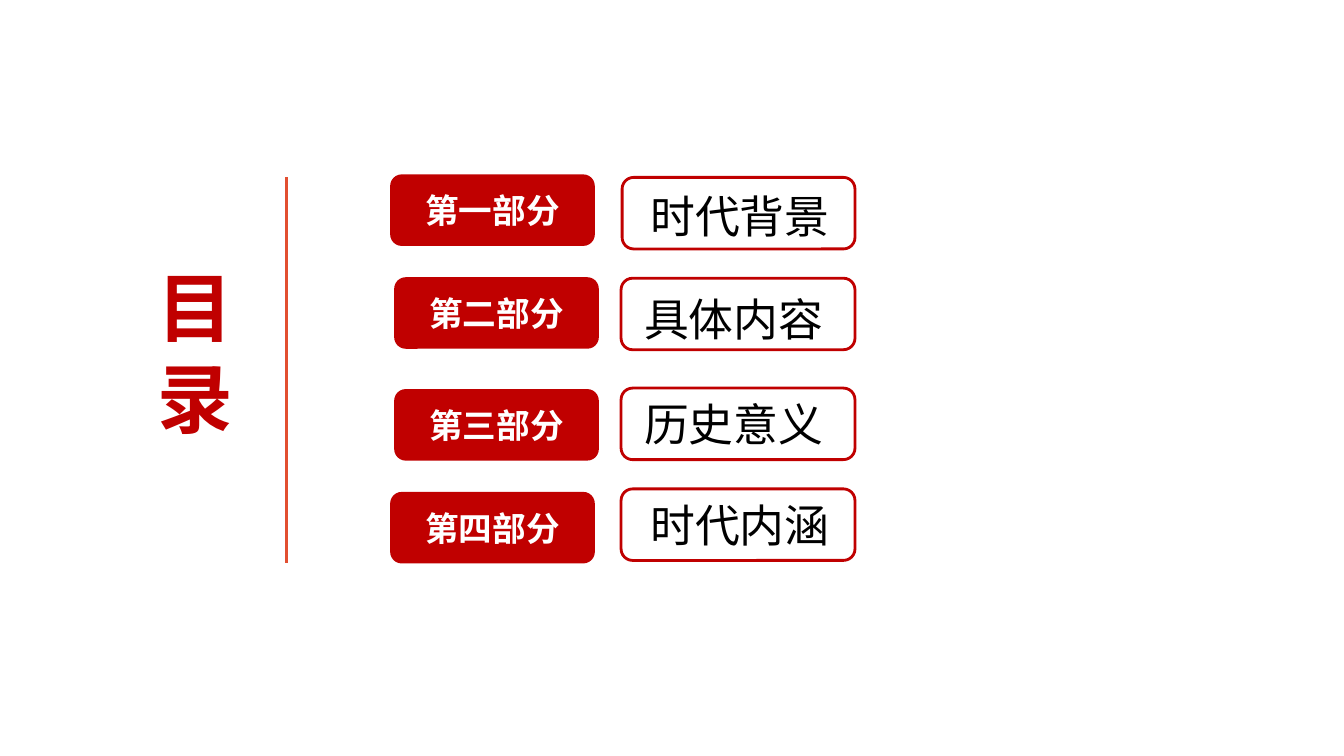
from lxml import etree
from pptx import Presentation
from pptx.dml.color import RGBColor
from pptx.enum.shapes import MSO_CONNECTOR, MSO_SHAPE
from pptx.enum.text import MSO_ANCHOR, MSO_AUTO_SIZE, PP_ALIGN
from pptx.oxml.ns import qn
from pptx.util import Inches, Pt

ROUND = MSO_SHAPE.ROUNDED_RECTANGLE
STRAIGHT = MSO_CONNECTOR.STRAIGHT
MIDDLE = MSO_ANCHOR.MIDDLE
GROW = MSO_AUTO_SIZE.SHAPE_TO_FIT_TEXT
CENTER = PP_ALIGN.CENTER

RED = RGBColor(0xC0, 0x00, 0x00)
ORANGE = RGBColor(0xE2, 0x4F, 0x31)
WHITE = RGBColor(0xFF, 0xFF, 0xFF)
BLACK = RGBColor(0x00, 0x00, 0x00)


class Deck:
    head_font = "Noto Sans CJK SC"
    body_font = "Noto Sans CJK JP"
    high = 0.71
    curve = 0.161

    def __init__(self):
        self.prs = Presentation()
        self.prs.slide_width = Inches(13.33)
        self.prs.slide_height = Inches(7.5)
        self.slide = self.prs.slides.add_slide(self.prs.slide_layouts[6])

    def style(self, frame, text, size, color, bold=False):
        frame.text = text
        face = self.head_font if bold else self.body_font
        for para in frame.paragraphs:
            for run in para.runs:
                font = run.font
                font.size = Pt(size)
                font.bold = bold
                font.color.rgb = color
                font.name = face
                east = etree.SubElement(run._r.get_or_add_rPr(), qn("a:ea"))
                east.set("typeface", face)

    def panel(self, left, top, width):
        box = self.slide.shapes.add_shape(
            ROUND, Inches(left), Inches(top), Inches(width), Inches(self.high))
        box.adjustments[0] = self.curve
        box.shadow.inherit = False
        return box

    def badge(self, left, top, text):
        box = self.panel(left, top, 2.03)
        box.fill.solid()
        box.fill.fore_color.rgb = RED
        box.line.fill.background()
        frame = box.text_frame
        frame.vertical_anchor = MIDDLE
        self.style(frame, text, 24, WHITE, True)
        frame.paragraphs[0].alignment = CENTER

    def outline(self, left, top, width):
        box = self.panel(left, top, width)
        box.fill.background()
        box.line.color.rgb = RED
        box.line.width = Pt(2)

    def label(self, left, top, width, height, text, size=32, color=BLACK,
              bold=False, flush=False):
        box = self.slide.shapes.add_textbox(
            Inches(left), Inches(top), Inches(width), Inches(height))
        frame = box.text_frame
        frame.word_wrap = flush
        frame.auto_size = GROW
        if flush:
            frame.margin_left = frame.margin_right = 0
            frame.margin_top = frame.margin_bottom = 0
        self.style(frame, text, size, color, bold)

    def rule(self, left, top, end):
        line = self.slide.shapes.add_connector(
            STRAIGHT, Inches(left), Inches(top), Inches(left), Inches(end))
        line.line.color.rgb = ORANGE
        line.line.width = Pt(2.25)
        etree.SubElement(line._element.spPr, qn("a:effectLst"))


def main():
    deck = Deck()
    for left, top, part in [
        (3.87, 1.73, "第一部分"),
        (3.91, 2.75, "第二部分"),
        (3.91, 3.86, "第三部分"),
        (3.87, 4.88, "第四部分"),
    ]:
        deck.badge(left, top, part)

    for left, top, width in [
        (6.17, 1.76, 2.31),
        (6.16, 2.76, 2.32),
        (6.16, 3.85, 2.32),
        (6.16, 4.85, 2.32),
    ]:
        deck.outline(left, top, width)

    for top, topic in [(2.84, "具体内容"), (3.89, "历史意义")]:
        deck.label(6.29, top, 1.98, 0.64, topic)
    for top, topic in [(1.87, "时代背景"), (4.94, "时代内涵")]:
        deck.label(6.45, top, 2.03, 0.54, topic, flush=True)

    deck.label(1.46, 2.54, 0.96, 1.92, "目\n录", 54, RED, True)
    deck.rule(2.84, 1.76, 5.59)
    deck.prs.save("out.pptx")


if __name__ == "__main__":
    main()
